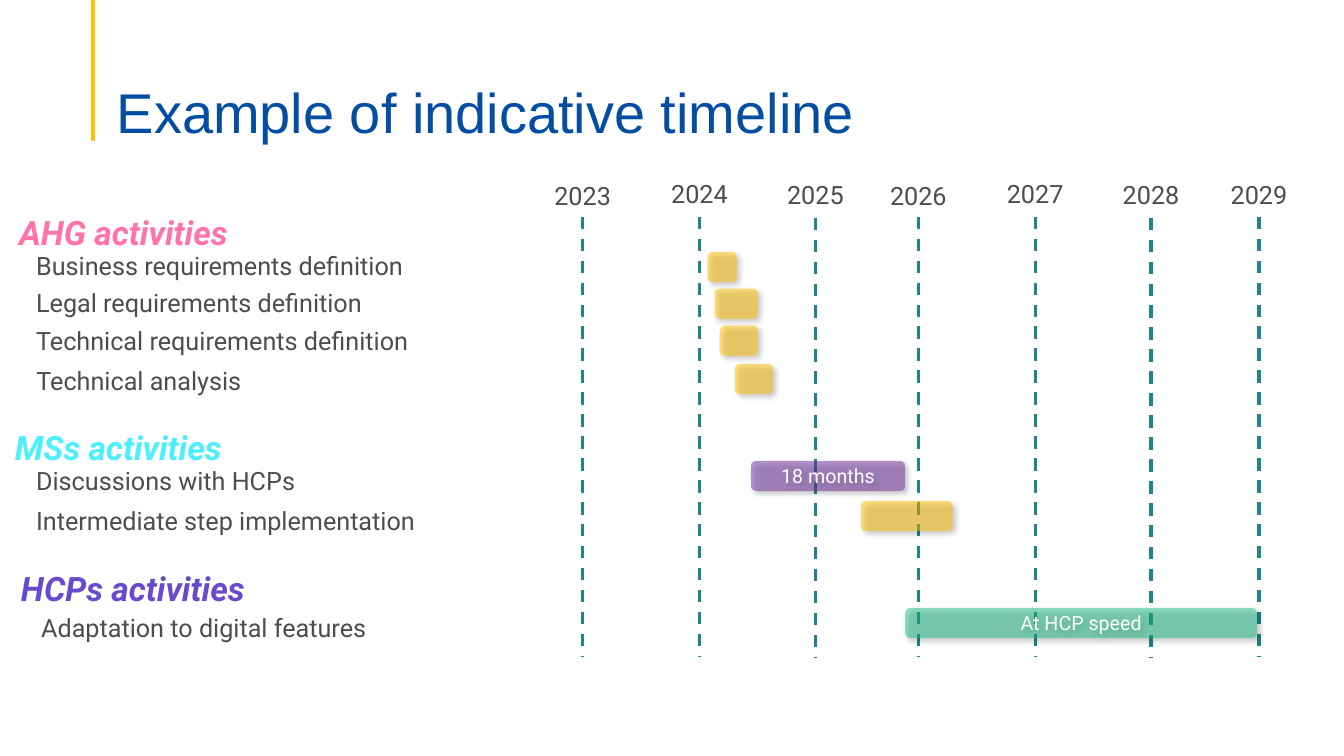
from pptx import Presentation
from pptx.dml.color import RGBColor
from pptx.enum.dml import MSO_LINE
from pptx.enum.shapes import MSO_CONNECTOR, MSO_SHAPE
from pptx.enum.text import MSO_ANCHOR, MSO_AUTO_SIZE, PP_ALIGN
from pptx.oxml import parse_xml
from pptx.oxml.ns import nsdecls, qn
from pptx.util import Pt

# Content (lengths in points)
TITLE = "Example of indicative timeline"
YEARS = [  # year, centre x, label top, line top
    ("2023", 416.2, 125.3, 154.8),
    ("2024", 499.7, 123.8, 154.8),
    ("2025", 582.5, 124.6, 155.5),
    ("2026", 656, 125.3, 154.8),
    ("2027", 739.4, 123.8, 154.8),
    ("2028", 822.2, 124.6, 155.5),
    ("2029", 899.3, 124.6, 154.8),
]
GROUPS = [  # heading, colour, left, top
    ("AHG activities", "pink", 6.5, 147.6),
    ("MSs activities", "cyan", 3.6, 301.7),
    ("HCPs activities", "violet", 7.9, 401.8),
]
TASKS = [  # name, left, top, bar (left, top, width, colour, text)
    ("Business requirements definition", 18.7, 175, (505.4, 180, 20.9, "amber", "")),
    ("Legal requirements definition", 18.7, 201.6, (510.5, 206.2, 31, "amber", "")),
    ("Technical requirements definition", 18.7, 229, (514.1, 232.6, 27.4, "amber", "")),
    ("Technical analysis", 18.9, 257.2, (524.9, 259.9, 27.4, "amber", "")),
    ("Discussions with HCPs", 18.7, 328.5, (536.4, 329.2, 110.2, "purple", "18 months")),
    ("Intermediate step implementation", 18.7, 357.1, (614.9, 357.8, 65.5, "amber", "")),
    ("Adaptation to digital features", 22.3, 433.5, (646.6, 434.2, 251.3, "green", "At HCP speed")),
]

# Theme
THEME = {
    "colour": dict(accent="FFC000", title="034EA2", text="4D4D4D", grid="1E858B",
                   white="FFFFFF", pink="FF73AA", cyan="4BEFFF", violet="674BCD",
                   amber="FFC000", purple="7030A0", green="1EC08A"),
    "title": dict(name="Arial", size=Pt(40)),
    "head": dict(name="Roboto", size=Pt(24), bold=True, italic=True),
    "label": dict(name="Roboto", size=Pt(18)),
    "bar": dict(name="Roboto", size=Pt(14)),
}
YEAR_W, LABEL_W, HEAD_W, BAR_H, LINE_H = 54.7, 375, 190.8, 21.6, 314.6
SHADOW = ('<a:outerShdw %s blurRad="50800" dist="38100" dir="2700000" algn="tl" rotWithShape="0">'
          '<a:srgbClr val="000000"><a:alpha val="40000"/></a:srgbClr></a:outerShdw>' % nsdecls("a"))


def rgb(key):
    return RGBColor.from_string(THEME["colour"][key])


def write(tf, text, style, colour, align=PP_ALIGN.LEFT):
    p = tf.paragraphs[0]
    p.alignment = align
    r = p.add_run()
    r.text = text
    for name, value in THEME[style].items():
        setattr(r.font, name, value)
    r.font.color.rgb = rgb(colour)
    return p


def add_text(s, x, y, w, h, text, style, colour, align=PP_ALIGN.LEFT):
    tf = s.shapes.add_textbox(Pt(x), Pt(y), Pt(w), Pt(h)).text_frame
    tf.word_wrap = True
    tf.auto_size = MSO_AUTO_SIZE.SHAPE_TO_FIT_TEXT
    write(tf, text, style, colour, align)


def add_vertical(s, x, top, height, colour, dash=None):
    line = s.shapes.add_connector(MSO_CONNECTOR.STRAIGHT, Pt(x), Pt(top), Pt(x), Pt(top + height))
    line.line.color.rgb = rgb(colour)
    line.line.width = Pt(2.25)
    line.line.dash_style = dash
    line._element.spPr.append(parse_xml("<a:effectLst %s/>" % nsdecls("a")))


def add_bar(s, x, y, w, colour, text):
    sp = s.shapes.add_shape(MSO_SHAPE.ROUNDED_RECTANGLE, Pt(x), Pt(y), Pt(w), Pt(BAR_H))
    sp.fill.solid()
    sp.fill.fore_color.rgb = rgb(colour)
    sp.line.fill.background()
    sp.shadow.inherit = False
    # Half-transparent fill and soft shadow
    sp_pr = sp._element.spPr
    sp_pr.find(qn("a:solidFill"))[0].append(parse_xml('<a:alpha %s val="50000"/>' % nsdecls("a")))
    sp_pr.find(qn("a:effectLst")).append(parse_xml(SHADOW))
    if text:
        sp.text_frame.vertical_anchor = MSO_ANCHOR.MIDDLE
        write(sp.text_frame, text, "bar", "white", PP_ALIGN.CENTER)


def main():
    prs = Presentation()
    prs.slide_width, prs.slide_height = Pt(960), Pt(540)
    s = prs.slides.add_slide(prs.slide_layouts[6])

    # Title and accent line
    add_vertical(s, 66.5, 0, 101, "accent")
    tf = s.shapes.add_textbox(Pt(76.3), Pt(41.8), Pt(828), Pt(61.9)).text_frame
    tf.word_wrap = True
    tf.vertical_anchor = MSO_ANCHOR.BOTTOM
    tf.margin_bottom = 0
    write(tf, TITLE, "title", "title").line_spacing = 0.9

    # Year grid
    for year, x, label_top, line_top in YEARS:
        add_vertical(s, x, line_top, LINE_H, "grid", MSO_LINE.DASH)
        add_text(s, x - YEAR_W / 2, label_top, YEAR_W, 29, year, "label", "text", PP_ALIGN.CENTER)

    # Activity groups
    for heading, colour, x, y in GROUPS:
        add_text(s, x, y, HEAD_W, 36, heading, "head", colour)

    # Tasks and their bars
    for name, x, y, bar in TASKS:
        add_text(s, x, y, LABEL_W, 29, name, "label", "text")
        add_bar(s, *bar)

    prs.save("out.pptx")


if __name__ == "__main__":
    main()
